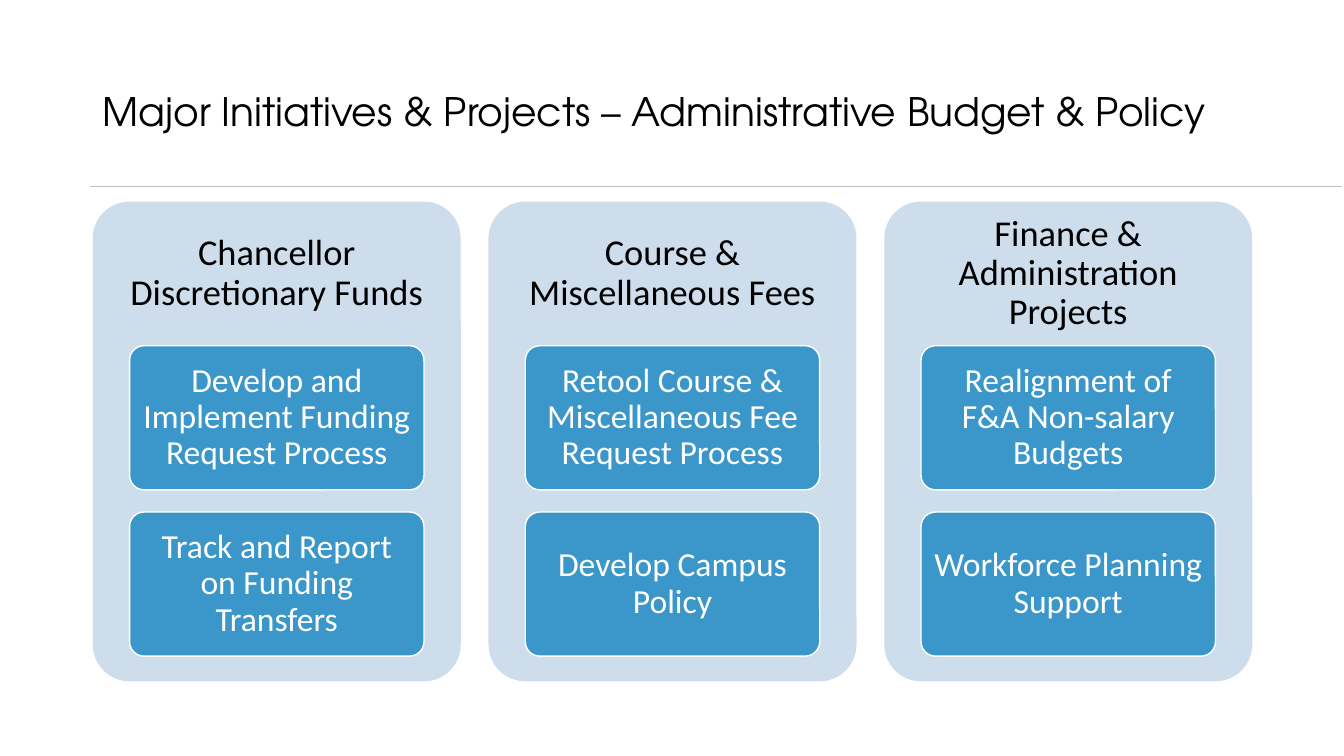
"""Build a slide with three columns of budget initiatives."""
from dataclasses import dataclass

from lxml import etree
from pptx import Presentation
from pptx import util as u
from pptx.dml.color import RGBColor
from pptx.enum import shapes, text
from pptx.oxml.ns import qn


@dataclass(frozen=True)
class Theme:
    """Colours, fonts and type sizes."""
    ink: str = "000000"
    white: str = "FFFFFF"
    panel: str = "CEDDEB"
    card: str = "3B97C9"
    rule: str = "BFBFBF"
    title_font: str = "TeX Gyre Adventor"
    body_font: str = "Calibri"
    title_size: int = 28
    heading_size: int = 26
    card_size: int = 24


@dataclass(frozen=True)
class Grid:
    """Column and row measures in inches."""
    left: float = 0.92
    top: float = 2.0
    width: float = 3.65
    height: float = 4.76
    column_step: float = 3.925
    heading_height: float = 1.43
    card_indent: float = 0.365
    card_height: float = 1.43
    row_step: float = 1.65

    def panel(self, column):
        """Return the box of a column's panel."""
        return self.left + column * self.column_step, self.top, self.width, self.height

    def heading(self, column):
        """Return the box of a column's heading."""
        return (*self.panel(column)[:3], self.heading_height)

    def card(self, column, row):
        """Return the box of one card."""
        x, y, w, _ = self.panel(column)
        return (x + self.card_indent, y + self.heading_height + row * self.row_step,
                w - 2 * self.card_indent, self.card_height)


THEME = Theme()
GRID = Grid()
COLUMNS = [
    ("Chancellor Discretionary Funds",
     ["Develop and Implement Funding Request Process",
      "Track and Report on Funding Transfers"]),
    ("Course & Miscellaneous Fees",
     ["Retool Course & Miscellaneous Fee Request Process",
      "Develop Campus Policy"]),
    ("Finance & Administration Projects",
     ["Realignment of F&A Non-salary Budgets",
      "Workforce Planning Support"]),
]


def inches(box):
    """Convert a box of numbers to lengths."""
    return [u.Inches(value) for value in box]


def set_text(sp, words, font, size, color, align, insets):
    """Write one vertically centred paragraph in a shape."""
    tf = sp.text_frame
    tf.word_wrap = True
    tf.auto_size = text.MSO_AUTO_SIZE.NONE
    tf.vertical_anchor = text.MSO_ANCHOR.MIDDLE
    tf.margin_left = tf.margin_right = u.Inches(insets[0])
    tf.margin_top = tf.margin_bottom = u.Inches(insets[1])
    p = tf.paragraphs[0]
    p.text = words
    p.alignment = align
    p.line_spacing = 0.9
    p.font.name = font
    p.font.size = u.Pt(size)
    p.font.color.rgb = RGBColor.from_string(color)


def add_title(s, words):
    """Place and format the slide title."""
    sp = s.shapes.title
    sp.left, sp.top, sp.width, sp.height = inches((0.92, 0.4, 11.5, 1.45))
    set_text(sp, words, THEME.title_font, THEME.title_size, THEME.ink,
             text.PP_ALIGN.LEFT, (0.1, 0.05))


def add_rule(s):
    """Draw the thin line under the title."""
    line = s.shapes.add_connector(shapes.MSO_CONNECTOR.STRAIGHT,
                                  *inches((0.89, 1.85, 13.31, 1.85)))
    line.line.color.rgb = RGBColor.from_string(THEME.rule)
    line.line.width = u.Pt(0.5)
    etree.SubElement(line._element.spPr, qn("a:effectLst"))


def add_rounded(s, box, fill, outline=None):
    """Add a rounded rectangle."""
    sp = s.shapes.add_shape(shapes.MSO_SHAPE.ROUNDED_RECTANGLE, *inches(box))
    sp.adjustments[0] = 0.1
    sp.shadow.inherit = False
    sp.fill.solid()
    sp.fill.fore_color.rgb = RGBColor.from_string(fill)
    if outline:
        sp.line.color.rgb = RGBColor.from_string(outline)
        sp.line.width = u.Pt(1)
    else:
        sp.line.fill.background()
    return sp


def add_column(s, column, heading, cards):
    """Add a panel with its heading and cards."""
    add_rounded(s, GRID.panel(column), THEME.panel)
    label = s.shapes.add_textbox(*inches(GRID.heading(column)))
    set_text(label, heading, THEME.body_font, THEME.heading_size, THEME.ink,
             text.PP_ALIGN.CENTER, (0.11, 0.11))
    for row, words in enumerate(cards):
        sp = add_rounded(s, GRID.card(column, row), THEME.card, THEME.white)
        set_text(sp, words, THEME.body_font, THEME.card_size, THEME.white,
                 text.PP_ALIGN.CENTER, (0.07, 0.05))


def main():
    """Build and save the slide."""
    prs = Presentation()
    prs.slide_width, prs.slide_height = inches((13.33, 7.5))
    s = prs.slides.add_slide(prs.slide_layouts.get_by_name("Title Only"))
    add_rule(s)
    add_title(s, "Major Initiatives & Projects – Administrative Budget & Policy")
    for column, (heading, cards) in enumerate(COLUMNS):
        add_column(s, column, heading, cards)
    prs.save("out.pptx")


if __name__ == "__main__":
    main()
